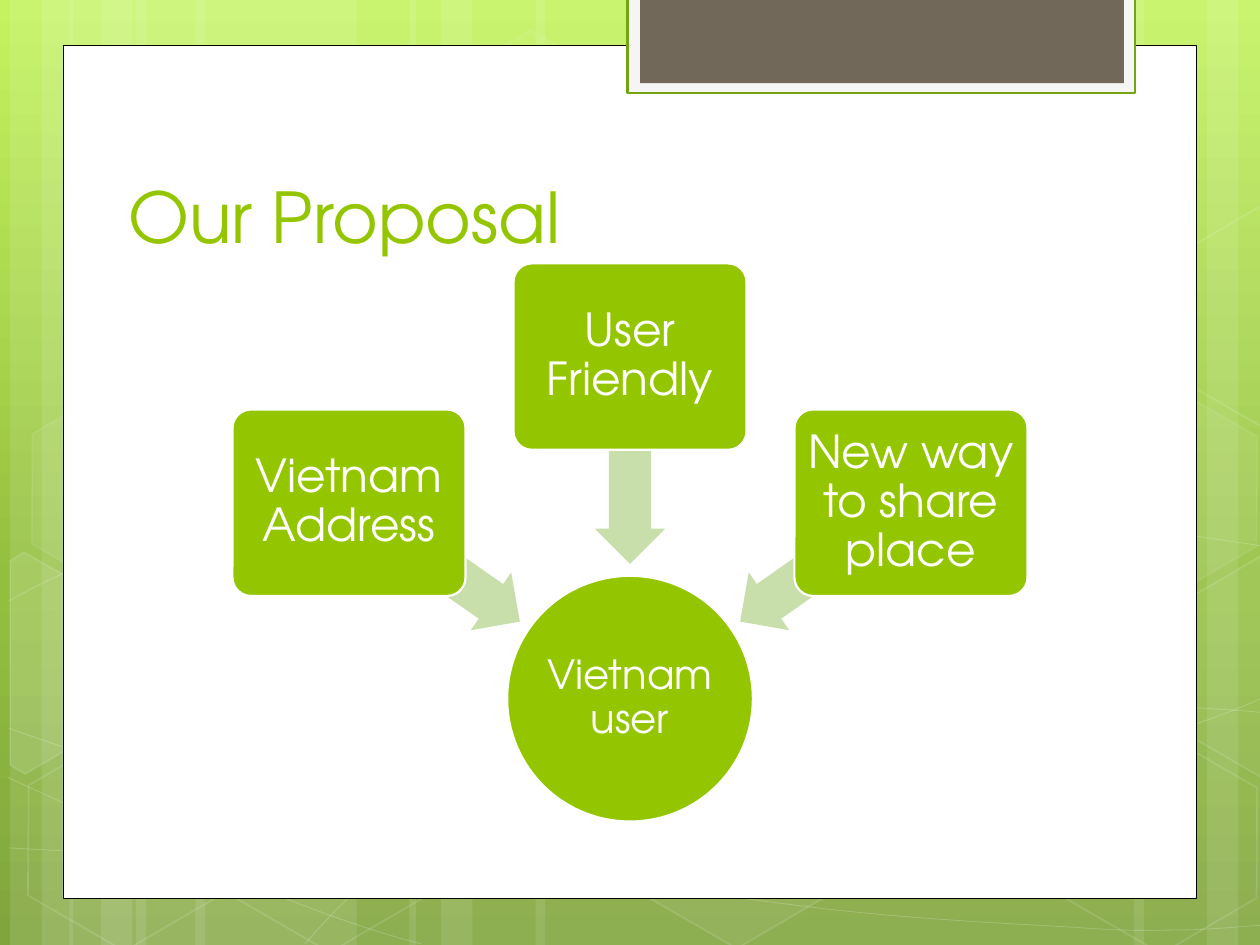
from copy import deepcopy
from dataclasses import dataclass
from math import cos, radians, sin

from lxml.etree import SubElement
from pptx import Presentation
from pptx.dml.color import RGBColor as RGB
from pptx.enum.shapes import MSO_SHAPE as SHAPE
from pptx.enum.text import MSO_ANCHOR as ANCHOR, PP_ALIGN as ALIGN
from pptx.oxml.ns import qn
from pptx.util import Inches, Pt


@dataclass(frozen=True)
class Theme:
    font: str = "TeX Gyre Adventor"
    white: str = "FFFFFF"
    black: str = "000000"
    green: str = "94C600"
    dark_green: str = "74A510"
    pale_green: str = "C8DFAB"
    off_white: str = "F5F5F5"
    brown: str = "71685A"
    backdrop: tuple = ((0, "C3F35F"), (0.62, "93BF3F"), (1, "81A53E"))
    title_size: int = 40
    box_size: int = 26
    hub_size: int = 23


T = Theme()

STRIPES = [(1.08, 1.75), (0.08, 0.5), (0.33, 0.83), (1.55, 1.75), (0.55, 0.5), (0.8, 0.83),
           (7.33, 1.75), (9.58, 0.5), (9, 0.83), (4.25, 3.08), (3.25, 0.5), (3.5, 0.83)]

# Each wave is a start point followed by three Bezier points per segment
WAVES = [
    [(0.07, 6.73), (0.61, 6.76), (1.15, 6.79), (1.9, 6.78), (2.65, 6.77), (3.58, 6.75),
     (4.58, 6.65), (5.58, 6.55), (7, 6.36), (7.92, 6.17), (8.83, 5.98), (9.77, 5.68), (10.07, 5.51)],
    [(0.07, 4.77), (0.36, 4.61), (0.65, 4.46), (1.21, 4.31), (1.78, 4.16), (2.59, 3.94),
     (3.47, 3.87), (4.36, 3.8), (5.44, 3.79), (6.54, 3.87), (7.64, 3.95), (9.47, 4.26), (10.07, 4.34)],
    [(0.06, 6.17), (1.27, 6.72), (2.47, 7.27), (3.34, 7.49)],
    [(0.07, 5.78), (0.38, 5.89), (0.7, 6), (1.28, 6.16), (1.86, 6.31), (2.73, 6.56),
     (3.57, 6.73), (4.4, 6.9), (5.45, 7.08), (6.28, 7.18), (7.11, 7.29), (8, 7.33),
     (8.53, 7.36), (9.05, 7.4), (9.19, 7.38), (9.45, 7.38), (9.71, 7.37), (9.89, 7.35), (10.07, 7.34)],
    [(2.42, 7.49), (2.6, 7.29), (2.78, 7.09), (3.02, 6.91), (3.26, 6.73), (3.6, 6.53),
     (3.88, 6.39), (4.16, 6.25), (4.33, 6.19), (4.7, 6.09), (5.06, 5.99), (5.73, 5.85),
     (6.08, 5.78), (6.44, 5.71), (6.49, 5.71), (6.8, 5.69), (7.11, 5.66), (7.6, 5.63),
     (7.94, 5.62), (8.29, 5.61), (8.86, 5.62), (8.86, 5.62), (9.08, 5.62), (9.31, 5.62),
     (9.53, 5.62), (9.71, 5.63), (9.88, 5.64), (10.06, 5.66)],
]

# Left, top, fill opacity (None is unfilled), line opacity
HEXAGONS = [(3.34, 0.36, 4, 8), (4.97, 5.89, 6, 12), (0.11, 5.91, None, 12), (0.14, 3.12, 7, 8),
            (1.74, 5.92, None, 12), (8.34, 5.93, None, 12), (8.34, 3.14, 7, 8)]

# Hexagons cut off by the slide edge: outline, centre, fill opacity
CUT_HEXAGONS = [
    ([(0.08, 4.45), (0.19, 4.38), (0.96, 4.82), (0.95, 5.7), (0.2, 6.14), (0.08, 6.07)],
     (0.36, 5.35), 10),
    ([(9.26, 4.85), (10.01, 4.41), (10.09, 4.46), (10.09, 6.13), (10.02, 6.17), (9.26, 5.73)],
     (9.85, 5.2), 4),
    ([(9.26, 2.07), (10.01, 1.63), (10.1, 1.68), (10.09, 3.35), (10.02, 3.39), (9.26, 2.95)],
     (9.85, 2.41), None),
]
TILT = 30


def paint(fill, color, opacity=100):
    if color is None or opacity is None:
        fill.background()
        return
    fill.solid()
    fill.fore_color.rgb = RGB.from_string(color)
    if opacity < 100:
        clr = fill._xPr.find(qn("a:solidFill"))[0]
        SubElement(clr, qn("a:alpha"), val=str(opacity * 1000))


def style(sp, fill=None, opacity=100, line=None, width=1, line_opacity=100):
    sp.shadow.inherit = False
    paint(sp.fill, fill, opacity)
    paint(sp.line.fill, line, line_opacity)
    if line:
        sp.line.width = Pt(width)
    return sp


def add_shape(s, kind, box, rotation=0, adjust=(), **look):
    sp = s.shapes.add_shape(kind, *map(Inches, box))
    sp.rotation = rotation
    for i, value in enumerate(adjust):
        sp.adjustments[i] = value
    return style(sp, **look)


def add_outline(s, points, close, **look):
    pts = [(Inches(x), Inches(y)) for x, y in points]
    builder = s.shapes.build_freeform(*pts[0])
    builder.add_line_segments(pts[1:], close=close)
    return style(builder.convert_to_shape(), **look)


def add_curve(s, points, **look):
    """Join every third point, then bend each segment with its control points."""
    sp = add_outline(s, points[::3], False, **look)
    for i, segment in enumerate(list(sp._element.iter(qn("a:lnTo")))):
        segment.tag = qn("a:cubicBezTo")
        segment.clear()
        for x, y in points[3 * i + 1:3 * i + 4]:
            SubElement(segment, qn("a:pt"), x=str(Inches(x) - sp.left), y=str(Inches(y) - sp.top))


def turn(points, center, angle):
    c, k = cos(radians(angle)), sin(radians(angle))
    cx, cy = center
    return [(cx + (x - cx) * c - (y - cy) * k, cy + (x - cx) * k + (y - cy) * c)
            for x, y in points]


def write(sp, text, size, color, anchor=ANCHOR.MIDDLE, align=ALIGN.CENTER, inset=None, spacing=None):
    tf = sp.text_frame
    frame = {"word_wrap": True, "vertical_anchor": anchor}
    if inset is not None:
        frame |= {f"margin_{side}": Inches(inset) for side in ("left", "right", "top", "bottom")}
    p = tf.paragraphs[0]
    r = p.add_run()
    r.text = text
    formats = [(tf, frame), (p, {"alignment": align, "line_spacing": spacing}),
               (r.font, {"name": T.font, "size": Pt(size)})]
    for target, values in formats:
        for name, value in values.items():
            setattr(target, name, value)
    r.font.color.rgb = RGB.from_string(color)


def add_backdrop(s, box):
    left, top, _, height = box
    # Gradient
    fill = s.background.fill
    fill.gradient()
    fill.gradient_angle = 270
    stops = s.element.find(".//" + qn("a:gsLst"))
    stops.insert(1, deepcopy(stops[0]))
    for stop, (position, color) in zip(fill.gradient_stops, T.backdrop):
        stop.position = position
        stop.color.rgb = RGB.from_string(color)
    # Stripes, waves and hexagons
    for x, width in STRIPES:
        add_shape(s, SHAPE.RECTANGLE, (left + x, top, width, height), fill=T.white, opacity=10)
    for points in WAVES:
        add_curve(s, points, line=T.white, width=0.5, line_opacity=20)
    for x, y, opacity, line_opacity in HEXAGONS:
        add_shape(s, SHAPE.HEXAGON, (left + x, top + y, 1.75, 1.52), TILT, (0.285,), fill=T.white,
                  opacity=opacity, line=T.white, line_opacity=line_opacity)
    for points, center, opacity in CUT_HEXAGONS:
        sp = add_outline(s, turn(points, center, -TILT), True, fill=T.white, opacity=opacity,
                         line=T.white, line_opacity=12)
        sp.rotation = TILT


def add_card(s, box):
    left, top, width, height = box
    add_shape(s, SHAPE.RECTANGLE, box, fill=T.white, line=T.black, width=0.5)
    # Tab hanging from the top edge of the slide
    tab_left = left + width - 4.52
    add_shape(s, SHAPE.RECTANGLE, (tab_left, -0.02, 4.03, 0.76), fill=T.off_white,
              line=T.dark_green, width=1.25)
    add_shape(s, SHAPE.RECTANGLE, (tab_left + 0.1, -0.02, 3.84, 0.68), fill=T.brown)


def add_title(s, box, text):
    sp = s.shapes.add_textbox(*map(Inches, box))
    write(sp, text, T.title_size, T.green, ANCHOR.BOTTOM, ALIGN.LEFT)


def add_converging_diagram(s, box, hub, ideas):
    left, top, width, height = box
    center = left + width / 2
    look = {"fill": T.green, "line": T.white, "width": 1.25}
    # Hub
    d = 1.95
    sp = add_shape(s, SHAPE.OVAL, (center - d / 2, top + height - d, d, d), **look)
    write(sp, hub, T.hub_size, T.white, inset=0.02, spacing=0.9)
    # Ideas with arrows to the hub; the middle one stands higher
    w, h, arrow_w, arrow_h = 1.85, 1.48, 1.65, 0.56
    for side, text in zip((-1, 0, 1), ideas):
        drop = 1.16 * abs(side)
        arrow_top = top + 1.28 + 0.81 * abs(side)
        add_shape(s, SHAPE.LEFT_ARROW,
                  (center + 1.55 * side - arrow_w / 2, arrow_top, arrow_w, arrow_h),
                  270 + 55 * side, (0.6, 0.5), fill=T.pale_green)
        sp = add_shape(s, SHAPE.ROUNDED_RECTANGLE,
                       (center + 2.23 * side - w / 2, top + drop, w, h), adjust=(0.1,), **look)
        write(sp, text, T.box_size, T.white, inset=0.01, spacing=0.9)


def main():
    prs = Presentation()
    prs.slide_width, prs.slide_height = Inches(10), Inches(7.5)
    s = prs.slides.add_slide(prs.slide_layouts[6])
    add_backdrop(s, (0, 0, 10, 7.5))
    add_card(s, (0.5, 0.36, 9, 6.77))
    add_title(s, (0.92, 0.84, 7.68, 1.25), "Our Proposal")
    add_converging_diagram(s, (1.84, 2.09, 6.32, 4.43), "Vietnam user",
                           ["Vietnam Address", "User Friendly", "New way to share place"])
    prs.save("out.pptx")


if __name__ == "__main__":
    main()
